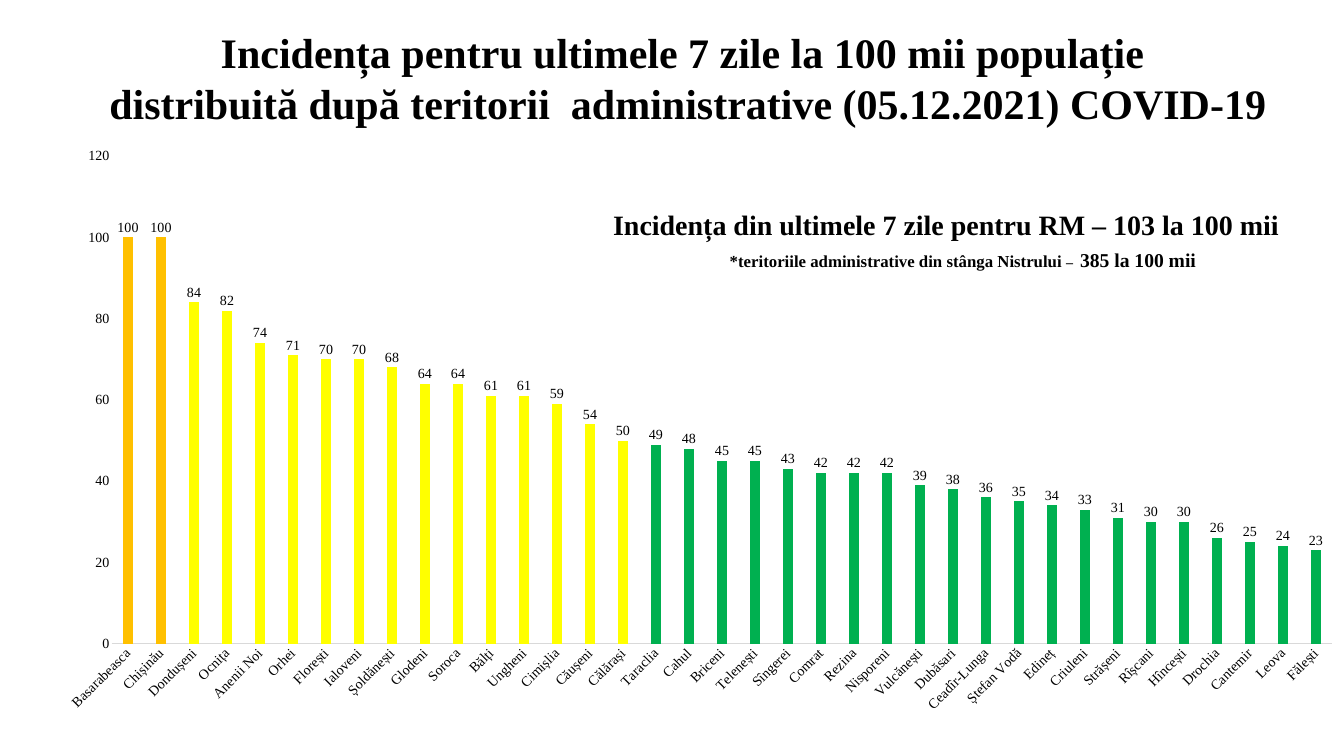
"""Build the slide showing seven-day COVID-19 incidence by territory."""
from dataclasses import dataclass

import pptx
import pptx.chart.data
import pptx.dml.color
import pptx.enum.chart
import pptx.enum.text
import pptx.oxml
import pptx.oxml.ns
import pptx.util


@dataclass(frozen=True)
class Theme:
    font: str = "Times New Roman"
    ink: str = "000000"
    axis: str = "D9D9D9"
    high: str = "FFC000"
    medium: str = "FFFF00"
    low: str = "00B050"
    title: int = 60
    headline: int = 40
    figure: int = 28
    note: int = 24
    small: int = 20


@dataclass(frozen=True)
class Area:
    """Percent shares of the slide's width and height."""
    left: float
    top: float
    width: float
    height: float


@dataclass(frozen=True)
class Span:
    text: str
    size: int


@dataclass(frozen=True)
class Caption:
    area: Area
    lines: tuple[tuple[Span, ...], ...]
    wrap: bool = True
    space_before: int = 0
    anchor: pptx.enum.text.MSO_ANCHOR = pptx.enum.text.MSO_ANCHOR.TOP


THEME = Theme()
WIDTH, HEIGHT = pptx.util.Inches(26.67), pptx.util.Inches(15)
CHART_AREA = Area(5.1, 17.87, 94.9, 84.93)
PLOT_SHARES = {"x": 0.033, "y": 0.033, "w": 0.958, "h": 0.759}

INCIDENCE = {
    "Basarabeasca": 100, "Chișinău": 100, "Dondușeni": 84, "Ocnița": 82,
    "Anenii Noi": 74, "Orhei": 71, "Florești": 70, "Ialoveni": 70,
    "Șoldănești": 68, "Glodeni": 64, "Soroca": 64, "Bălți": 61,
    "Ungheni": 61, "Cimișlia": 59, "Căușeni": 54, "Călărași": 50,
    "Taraclia": 49, "Cahul": 48, "Briceni": 45, "Telenești": 45,
    "Sîngerei": 43, "Comrat": 42, "Rezina": 42, "Nisporeni": 42,
    "Vulcănești": 39, "Dubăsari": 38, "Ceadîr-Lunga": 36, "Ștefan Vodă": 35,
    "Edineț": 34, "Criuleni": 33, "Strășeni": 31, "Rîșcani": 30,
    "Hîncești": 30, "Drochia": 26, "Cantemir": 25, "Leova": 24, "Fălești": 23,
}

CAPTIONS = (
    Caption(
        Area(5.89, 2.6, 90.59, 15.27),
        ((Span("Incidența pentru ultimele 7 zile la 100 mii populație ", THEME.title),),
         (Span("distribuită după teritorii  administrative (05.12.2021) COVID-19", THEME.title),)),
        space_before=10,
        anchor=pptx.enum.text.MSO_ANCHOR.MIDDLE,
    ),
    Caption(
        Area(44.96, 27.13, 51.89, 5.13),
        ((Span("Incidența din ultimele 7 zile pentru RM – 103 la 100 mii  ", THEME.headline),),),
        wrap=False,
    ),
    Caption(
        Area(46.83, 32.4, 49.98, 3.8),
        ((Span("*teritoriile administrative din stânga Nistrului ", THEME.note),
          Span("–  ", THEME.small),
          Span("385 la 100 mii ", THEME.figure)),),
    ),
)


def place(area: Area) -> tuple[int, int, int, int]:
    """Turn percent shares into slide lengths."""
    return (round(WIDTH * area.left / 100), round(HEIGHT * area.top / 100),
            round(WIDTH * area.width / 100), round(HEIGHT * area.height / 100))


def colour(code: str) -> pptx.dml.color.RGBColor:
    """Return the colour for a hex code."""
    return pptx.dml.color.RGBColor.from_string(code)


def style_font(font, size: int, bold: bool = False) -> None:
    """Give a font the theme's face and ink."""
    font.name, font.size, font.bold = THEME.font, pptx.util.Pt(size), bold
    font.color.rgb = colour(THEME.ink)


def level_colour(value: int) -> str:
    """Return the colour of an incidence level."""
    if value >= 100:
        return THEME.high
    return THEME.medium if value >= 50 else THEME.low


def draw_caption(page, caption: Caption) -> None:
    """Draw a centred bold caption."""
    box = page.shapes.add_textbox(*place(caption.area))
    frame = box.text_frame
    frame.word_wrap = caption.wrap
    frame.vertical_anchor = caption.anchor
    para = frame.paragraphs[0]
    para.alignment = pptx.enum.text.PP_ALIGN.CENTER
    para.space_before = pptx.util.Pt(caption.space_before)
    for row, line in enumerate(caption.lines):
        if row:
            para.add_line_break()
        for span in line:
            run = para.add_run()
            run.text = span.text
            style_font(run.font, span.size, bold=True)


def fix_plot(chart) -> None:
    """Pin the inner plot area to its shares of the chart."""
    plot_area = chart.plots[0]._element.getparent()
    for layout in plot_area.findall(pptx.oxml.ns.qn("c:layout")):
        plot_area.remove(layout)
    modes = "".join(f'<c:{side}Mode val="edge"/>' for side in "xy")
    shares = "".join(f'<c:{side} val="{share}"/>' for side, share in PLOT_SHARES.items())
    plot_area.insert(0, pptx.oxml.parse_xml(
        f'<c:layout {pptx.oxml.ns.nsdecls("c")}><c:manualLayout>'
        f'<c:layoutTarget val="inner"/>{modes}{shares}</c:manualLayout></c:layout>'))


def style_axes(chart) -> None:
    """Style both axes and slant the territory names."""
    for axis in (chart.category_axis, chart.value_axis):
        axis.major_tick_mark = axis.minor_tick_mark = pptx.enum.chart.XL_TICK_MARK.NONE
        axis.has_major_gridlines = False
        style_font(axis.tick_labels.font, THEME.small)
    names, values = chart.category_axis, chart.value_axis
    names.format.line.color.rgb = colour(THEME.axis)
    names.format.line.width = pptx.util.Pt(0.75)
    body = names._element.find(pptx.oxml.ns.qn("c:txPr")).find(pptx.oxml.ns.qn("a:bodyPr"))
    body.set("rot", str(-45 * 60000))
    values.format.line.fill.background()
    values.minimum_scale, values.maximum_scale, values.major_unit = 0, 120, 20
    values.tick_labels.number_format = "0"
    values.tick_labels.number_format_is_linked = False


def draw_chart(page) -> None:
    """Draw the columns coloured by incidence level."""
    data = pptx.chart.data.CategoryChartData(number_format="0")
    data.categories = list(INCIDENCE)
    data.add_series("Series 1", list(INCIDENCE.values()))
    kind = pptx.enum.chart.XL_CHART_TYPE.COLUMN_CLUSTERED
    chart = page.shapes.add_chart(kind, *place(CHART_AREA), data).chart
    chart.has_legend = chart.has_title = False
    style_font(chart.font, THEME.small)
    style_axes(chart)
    fix_plot(chart)

    plot = chart.plots[0]
    plot.gap_width, plot.overlap, plot.vary_by_categories = 219, -27, False
    series = plot.series[0]
    series.format.fill.solid()
    series.format.fill.fore_color.rgb = colour(THEME.medium)
    for index, value in enumerate(INCIDENCE.values()):
        fill = series.points[index].format.fill
        fill.solid()
        fill.fore_color.rgb = colour(level_colour(value))
    labels = series.data_labels
    labels.show_value = True
    labels.number_format, labels.number_format_is_linked = "0", False
    labels.position = pptx.enum.chart.XL_LABEL_POSITION.OUTSIDE_END
    style_font(labels.font, THEME.small)


def main() -> None:
    """Build and save the deck."""
    deck = pptx.Presentation()
    deck.slide_width, deck.slide_height = WIDTH, HEIGHT
    page = deck.slides.add_slide(deck.slide_layouts[6])
    draw_chart(page)
    for caption in CAPTIONS:
        draw_caption(page, caption)
    deck.save("out.pptx")


if __name__ == "__main__":
    main()
